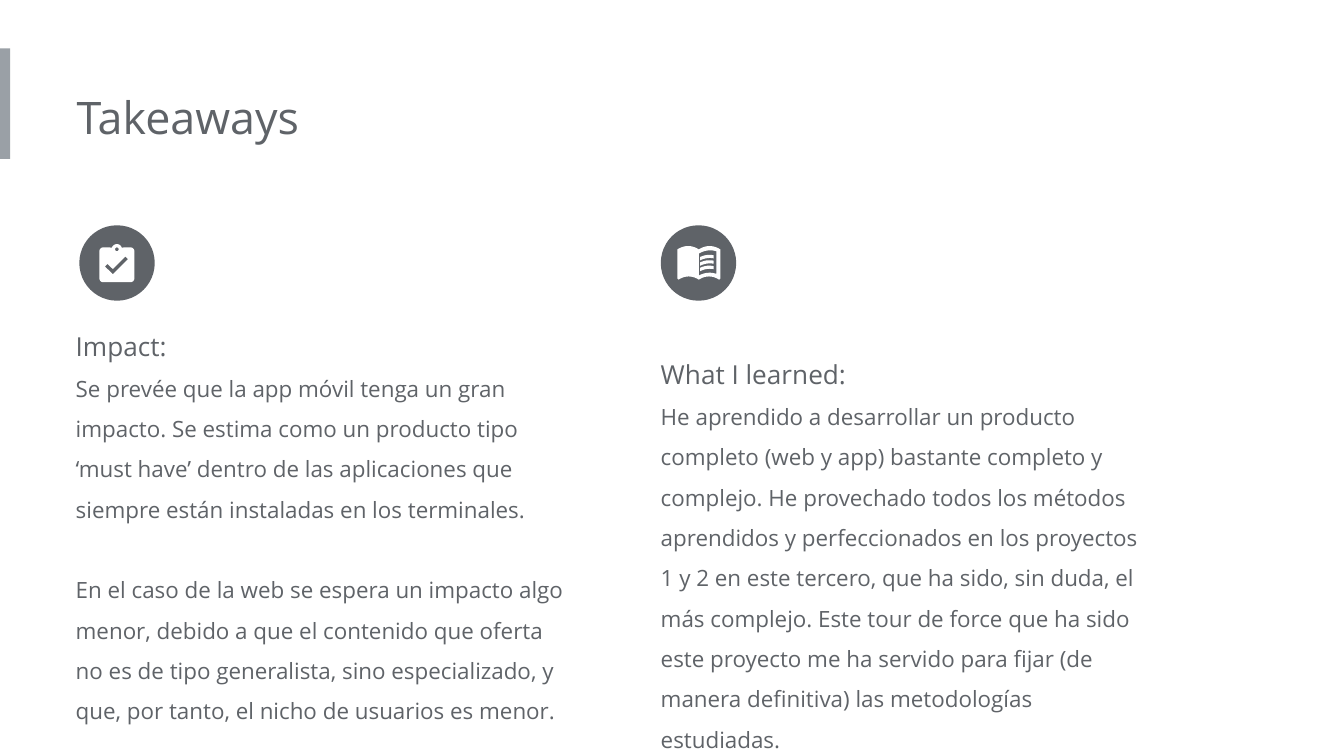
from math import cos, radians, sin

from pptx import Presentation
from pptx.dml.color import RGBColor
from pptx.enum.shapes import MSO_SHAPE as Shape
from pptx.enum.text import MSO_ANCHOR as Anchor, MSO_AUTO_SIZE as AutoSize, PP_ALIGN as Align
from pptx.util import Pt

FONT = "Open Sans"
GRAY = "5F6368"
LIGHT_GRAY = "9AA0A6"
WHITE = "FFFFFF"

IMPACT = [
    "Se prevée que la app móvil tenga un gran impacto. Se estima como un producto tipo "
    "‘must have’ dentro de las aplicaciones que siempre están instaladas en los terminales.",
    "En el caso de la web se espera un impacto algo menor, debido a que el contenido que "
    "oferta no es de tipo generalista, sino especializado, y que, por tanto, el nicho de "
    "usuarios es menor.",
]
LEARNED = [
    "He aprendido a desarrollar un producto completo (web y app) bastante completo y "
    "complejo. He provechado todos los métodos aprendidos y perfeccionados en los proyectos "
    "1 y 2 en este tercero, que ha sido, sin duda, el más complejo. Este tour de force que "
    "ha sido este proyecto me ha servido para fijar (de manera definitiva) las metodologías "
    "estudiadas.",
]


def rgb(value):
    return RGBColor.from_string(value)


def paint(shape, color):
    shape.shadow.inherit = False
    shape.fill.solid()
    shape.fill.fore_color.rgb = rgb(color)
    shape.line.fill.background()


def add_filled(slide, kind, left, top, width, height, color):
    shape = slide.shapes.add_shape(kind, Pt(left), Pt(top), Pt(width), Pt(height))
    paint(shape, color)


def prepare_frame(frame):
    frame.word_wrap = True
    frame.auto_size = AutoSize.SHAPE_TO_FIT_TEXT
    frame.vertical_anchor = Anchor.TOP
    frame.margin_left = 0
    frame.margin_top = frame.margin_right = frame.margin_bottom = Pt(7.2)


def write_paragraph(paragraph, text, size):
    paragraph.text = text
    paragraph.alignment = Align.LEFT
    for run in paragraph.runs:
        run.font.name = FONT
        run.font.size = Pt(size)
        run.font.color.rgb = rgb(GRAY)


def add_title(slide, text):
    title = slide.shapes.title
    title.left, title.top, title.width, title.height = Pt(41), Pt(41), Pt(388), Pt(43.2)
    prepare_frame(title.text_frame)
    write_paragraph(title.text_frame.paragraphs[0], text, 24)


def add_takeaway(slide, left, top, height, heading, body):
    box = slide.shapes.add_textbox(Pt(left), Pt(top), Pt(271.4), Pt(height))
    frame = box.text_frame
    prepare_frame(frame)
    write_paragraph(frame.paragraphs[0], heading, 14)
    for index, text in enumerate(body):
        paragraph = frame.add_paragraph()
        write_paragraph(paragraph, text, 12)
        if index:
            paragraph.space_before = Pt(21.6)
    for paragraph in frame.paragraphs:
        paragraph.line_spacing = 1.5


def add_outline(slide, contours):
    first, *others = [[(Pt(x), Pt(y)) for x, y in contour] for contour in contours]
    builder = slide.shapes.build_freeform(*first[0])
    builder.add_line_segments(first[1:], close=True)
    for contour in others:
        builder.move_to(*contour[0])
        builder.add_line_segments(contour[1:], close=True)
    paint(builder.convert_to_shape(), WHITE)


def arc(x, y, radius, start, end, steps=8):
    angles = [radians(start + (end - start) * i / steps) for i in range(steps + 1)]
    return [(x + radius * cos(a), y + radius * sin(a)) for a in angles]


def arch(start, end, rise, steps=10):
    (x0, y0), (x1, y1) = start, end
    return [(x0 + (x1 - x0) * t, y0 + (y1 - y0) * t - 4 * rise * t * (1 - t))
            for t in [i / steps for i in range(steps + 1)]]


def add_clipboard(slide):
    left, right, top, bottom, radius = 53.3, 72, 132.6, 151.2, 2
    center = (left + right) / 2
    board = (
        arc(left + radius, top + radius, radius, 180, 270)
        + arc(center, 133.6, 2.8, 200, 340)
        + arc(right - radius, top + radius, radius, -90, 0)
        + arc(right - radius, bottom - radius, radius, 0, 90)
        + arc(left + radius, bottom - radius, radius, 90, 180)
    )
    clip_hole = arc(center, 133.6, 1, 0, 360, 16)
    tick = [(60.5, 146.9), (56.2, 142.8), (57.6, 141.4),
            (60.5, 144.2), (67.2, 137.5), (68.6, 138.9)]
    add_outline(slide, [board, clip_hole, tick])


def add_book(slide):
    left, spine, right = 362.9, 374.4, 385.9
    cover = (
        arch((left, 133.6), (spine, 133.6), 1.8)
        + arch((spine, 133.6), (right, 133.6), 1.8)
        + [(right, 149.2), (right - 0.6, 149.8)]
        + arch((right - 0.6, 149.8), (spine, 149.8), 1.7)
        + arch((spine, 149.8), (left + 0.6, 149.8), 1.7)
        + [(left, 149.2)]
    )
    page = (arch((spine, 135.8), (383.8, 134.6), 1)
            + arch((383.8, 146.7), (spine, 147.6), 1))
    add_outline(slide, [cover, page])
    for row in range(3):
        y = 137.7 + 2.9 * row
        add_outline(slide, [arch((375.1, y), (382.3, y - 0.9), 0.6)
                            + arch((382.3, y + 0.7), (375.1, y + 1.8), 0.6)])


def main():
    presentation = Presentation()
    presentation.slide_width, presentation.slide_height = Pt(720), Pt(405)
    slide = presentation.slides.add_slide(presentation.slide_layouts[5])
    add_filled(slide, Shape.RECTANGLE, 0, 26, 5.5, 59.2, LIGHT_GRAY)
    add_title(slide, "Takeaways")
    add_takeaway(slide, 40.6, 161.3, 233.3, "Impact:", IMPACT)
    add_takeaway(slide, 354, 176.4, 211.7, "What I learned:", LEARNED)
    for left in (42.5, 354):
        add_filled(slide, Shape.OVAL, left, 120.7, 40.4, 40.4, GRAY)
    add_clipboard(slide)
    add_book(slide)
    presentation.save("out.pptx")


if __name__ == "__main__":
    main()
